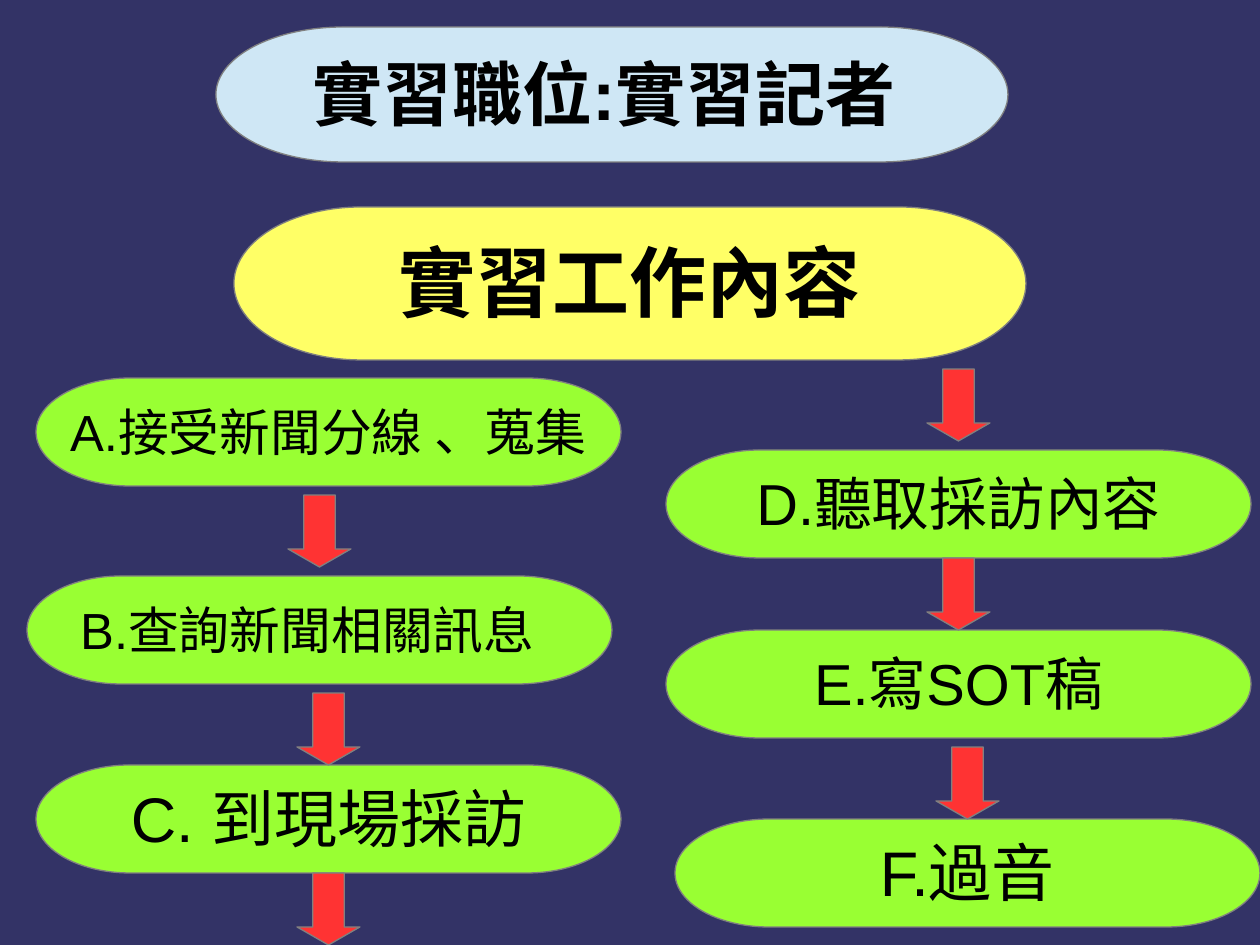
from pptx import Presentation
from pptx.dml.color import RGBColor as Rgb
from pptx.enum.shapes import MSO_SHAPE as Shape
from pptx.enum.text import MSO_ANCHOR as Anchor, PP_ALIGN as Align
from pptx.util import Pt

SCALE = 914400 / 126
COLORS = {
    "back": "333366",
    "title": "CFE7F5",
    "topic": "FFFF66",
    "step": "99FF33",
    "arrow": "FF3333",
    "edge": "808080",
    "text": "000000",
}


def px(n):
    return round(n * SCALE)


class Deck:
    font = "Arial"
    edge = Pt(0.75)
    step_size = (585, 108)
    arrow_size = (63, 72)

    def __init__(self, wide, high):
        self.prs = Presentation()
        self.prs.slide_width, self.prs.slide_height = px(wide), px(high)
        self.slide = self.prs.slides.add_slide(self.prs.slide_layouts[6])
        fill = self.slide.background.fill
        fill.solid()
        fill.fore_color.rgb = self.color("back")

    def color(self, name):
        return Rgb.from_string(COLORS[name])

    def shape(self, kind, x, y, size, fill):
        item = self.slide.shapes.add_shape(kind, px(x), px(y), *map(px, size))
        item.shadow.inherit = False
        item.fill.solid()
        item.fill.fore_color.rgb = self.color(fill)
        item.line.color.rgb = self.color("edge")
        item.line.width = self.edge
        return item

    def pill(self, x, y, size, fill, text, points, bold=False, shift=0):
        item = self.shape(Shape.FLOWCHART_TERMINATOR, x, y, size, fill)
        frame = item.text_frame
        frame.word_wrap = False
        frame.vertical_anchor = Anchor.MIDDLE
        frame.margin_left, frame.margin_right = px(11), px(11 + shift)
        frame.margin_top, frame.margin_bottom = px(10), px(5)
        para = frame.paragraphs[0]
        para.text = text
        para.alignment = Align.CENTER
        para.line_spacing = 0.93
        font = para.font
        font.name, font.size, font.bold = self.font, Pt(points), bold
        font.color.rgb = self.color("text")

    def step(self, x, y, text, points, shift=0):
        self.pill(x, y, self.step_size, "step", text, points, shift=shift)

    def arrow(self, x, y):
        item = self.shape(Shape.DOWN_ARROW, x, y, self.arrow_size, "arrow")
        item.adjustments[0] = 0.5
        item.adjustments[1] = 0.286

    def save(self):
        self.prs.save("out.pptx")


STEPS = [
    (675, 819, "F.過音", 36, 0),
    (36, 765, "C. 到現場採訪", 36, 0),
    (666, 630, "E.寫SOT稿", 33, 0),
    (27, 576, "B.查詢新聞相關訊息", 29, 24),
    (666, 450, "D.聽取採訪內容", 33, 0),
    (36, 378, "A.接受新聞分線 、蒐集", 29, 0),
]
ARROWS = [(288, 495), (297, 693), (927, 369), (927, 558), (936, 747), (297, 873)]


def main():
    deck = Deck(1260, 945)
    for step in STEPS:
        deck.step(*step)
    deck.pill(216, 27, (792, 135), "title", "實習職位:實習記者", 40, True, 16)
    deck.pill(234, 207, (792, 153), "topic", "實習工作內容", 44, True)
    for spot in ARROWS:
        deck.arrow(*spot)
    deck.save()


if __name__ == "__main__":
    main()
